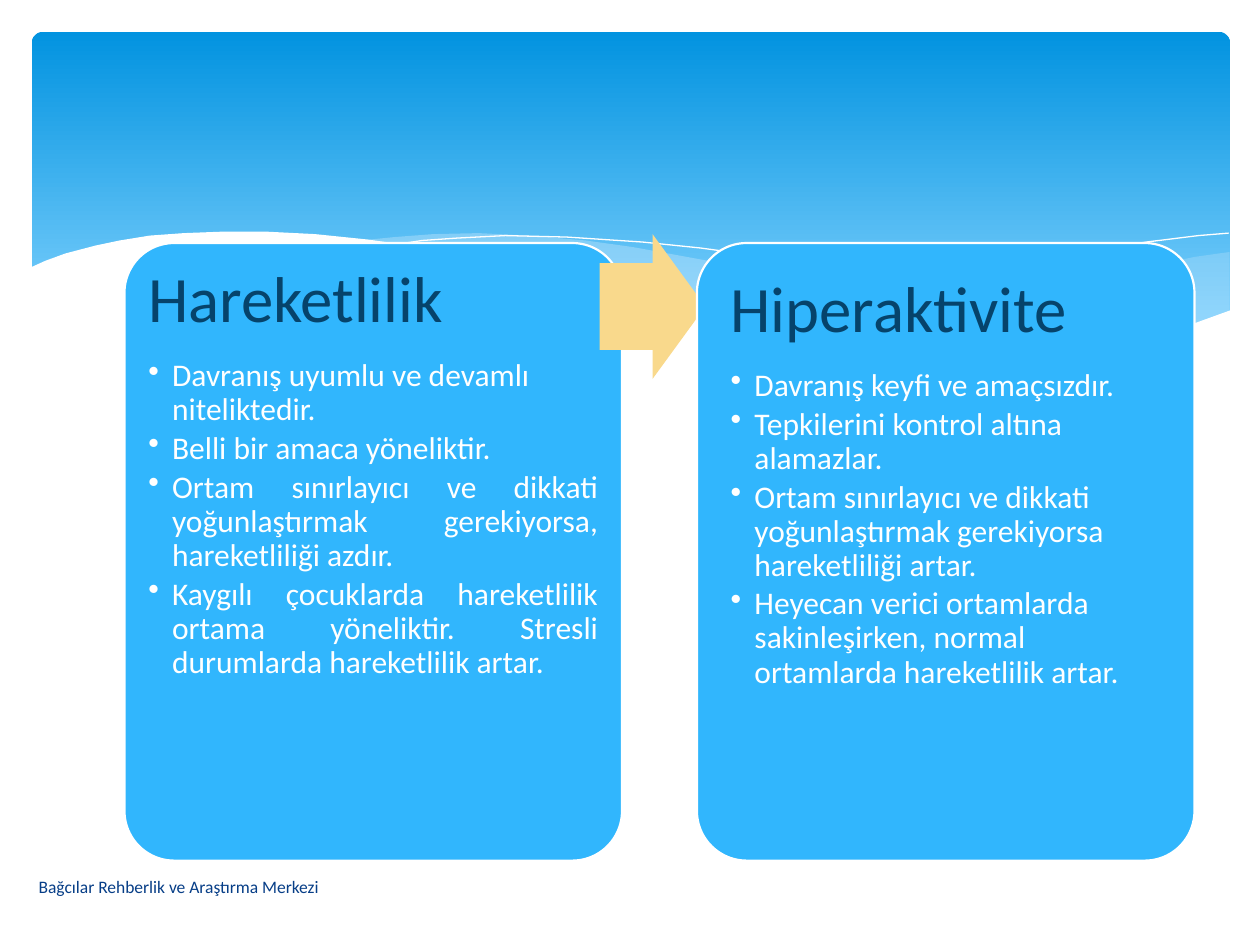
import pptx
import pptx.util
import pptx.dml.color
import pptx.enum.shapes
import pptx.enum.text
import pptx.oxml.ns
from lxml import etree

Cm, Pt = pptx.util.Cm, pptx.util.Pt
RGB = pptx.dml.color.RGBColor
KIND = pptx.enum.shapes.MSO_SHAPE
ALIGN = pptx.enum.text.PP_ALIGN
qn = pptx.oxml.ns.qn

WHITE = RGB(0xFF, 0xFF, 0xFF)
DEEP = RGB(0x02, 0x93, 0xE0)
LIGHT = RGB(0x83, 0xD3, 0xFE)
PALE = RGB(0xC6, 0xE7, 0xFC)
SKY = RGB(0x31, 0xB6, 0xFD)
SAND = RGB(0xF9, 0xD9, 0x8C)
NAVY = RGB(0x06, 0x43, 0x6B)
BLUE = RGB(0x07, 0x3E, 0x87)

FONT = "Calibri"
TOP, WIDE, HIGH = 4.9, 10.03, 12.45
PAD = 0.3

# Outlines as (x, y) in centimetres
RIGHT_WAVE = [
    (24.79, 5.08), (24.08, 5.18), (23.01, 5.41), (21.87, 5.66), (20.45, 6.02),
    (19.13, 6.3), (17.93, 6.53), (16.79, 6.73), (17.91, 6.88), (18.92, 6.99),
    (19.84, 7.04), (20.68, 7.06), (21.69, 7.01), (22.58, 6.91), (23.39, 6.73),
    (24.1, 6.53), (24.79, 6.27)]
MID_WAVE = [
    (22.68, 6.93), (21.26, 6.73), (19.69, 6.45), (17.93, 6.1), (15.98, 5.64),
    (14.83, 5.36), (13.74, 5.16), (12.75, 4.98), (11.81, 4.85), (10.67, 4.75),
    (9.65, 4.7), (8.74, 4.72), (7.95, 4.78), (7.26, 4.85), (8.2, 4.98),
    (9.19, 5.16), (10.26, 5.36), (11.4, 5.64), (13.46, 6.1), (15.27, 6.48),
    (16.89, 6.76), (18.34, 6.96), (19.63, 7.04), (20.78, 7.06), (21.77, 7.04)]
LONG_LINE = [
    (7.85, 4.95), (8.51, 4.85), (9.22, 4.8), (10.19, 4.75), (11.43, 4.78),
    (12.95, 4.88), (14.12, 5), (15.44, 5.18), (16.89, 5.41), (18.47, 5.74),
    (20.19, 6.12), (22.07, 6.63), (23.04, 6.91)]
SHORT_LINE = [
    (15.57, 6.53), (17.07, 6.12), (19, 5.66), (20.47, 5.33), (22, 5.05),
    (23.11, 4.88), (24.16, 4.75), (24.77, 4.7)]
WHITE_WAVE = [
    (24.82, 6.25), (24.13, 6.5), (23.37, 6.73), (22.53, 6.88), (21.59, 6.99),
    (20.55, 7.04), (19.33, 6.99), (17.98, 6.86), (16.46, 6.65), (14.71, 6.35),
    (12.78, 5.92), (11.35, 5.59), (9.93, 5.26), (8.64, 5), (7.42, 4.83),
    (6.35, 4.72), (5.36, 4.67), (4.5, 4.67), (3.71, 4.7), (3.02, 4.75),
    (2.41, 4.85), (1.93, 4.95), (1.32, 5.11), (0.91, 5.26), (0.58, 5.41),
    (0.58, 8.36), (24.82, 8.36)]

CALM = [
    ("Davranış uyumlu ve devamlı niteliktedir.", ALIGN.LEFT),
    ("Belli bir amaca yöneliktir.", ALIGN.LEFT),
    ("Ortam sınırlayıcı ve dikkati yoğunlaştırmak gerekiyorsa, "
     "hareketliliği azdır.", ALIGN.JUSTIFY),
    ("Kaygılı çocuklarda hareketlilik ortama yöneliktir. "
     "Stresli durumlarda hareketlilik artar.", ALIGN.JUSTIFY)]
HYPER = [
    ("Davranış keyfi ve amaçsızdır.", ALIGN.LEFT),
    ("Tepkilerini kontrol altına alamazlar.", ALIGN.LEFT),
    ("Ortam sınırlayıcı ve dikkati yoğunlaştırmak gerekiyorsa "
     "hareketliliği artar.", ALIGN.LEFT),
    ("Heyecan verici ortamlarda sakinleşirken, normal ortamlarda "
     "hareketlilik artar.", ALIGN.LEFT)]


def add_shape(slide, kind, box, fill=None, line=None, adjust=()):
    shape = slide.shapes.add_shape(kind, *map(Cm, box))
    shape.shadow.inherit = False
    for i, value in enumerate(adjust):
        shape.adjustments[i] = value
    if fill is not None:
        shape.fill.solid()
        shape.fill.fore_color.rgb = fill
    if line is None:
        shape.line.fill.background()
    else:
        shape.line.color.rgb = line
        shape.line.width = Pt(1.25)
    return shape


def add_banner(slide):
    banner = add_shape(slide, KIND.ROUNDED_RECTANGLE,
                       (0.64, 0.64, 24.16, 6.86), adjust=[0.034])
    banner.fill.gradient()
    banner.fill.gradient_angle = 270
    stops = banner.fill.gradient_stops
    for stop, place, tint in zip(stops, (0, 0.9), (DEEP, LIGHT)):
        stop.position = place
        stop.color.rgb = tint


def add_path(slide, points, close):
    spots = [(Cm(x), Cm(y)) for x, y in points]
    pen = slide.shapes.build_freeform(*spots[0])
    pen.add_line_segments(spots[1:], close=close)
    shape = pen.convert_to_shape()
    shape.shadow.inherit = False
    return shape


def add_wave(slide, points, fill, alpha=100):
    """Closed area with its opacity in percent."""
    wave = add_path(slide, points, True)
    wave.fill.solid()
    wave.fill.fore_color.rgb = fill
    wave.line.fill.background()
    if alpha < 100:
        tint = wave.fill._xPr.find(qn("a:solidFill"))[0]
        etree.SubElement(tint, qn("a:alpha"), val=str(alpha * 1000))


def add_curve(slide, points):
    curve = add_path(slide, points, False)
    curve.fill.background()
    curve.line.color.rgb = WHITE
    curve.line.width = Pt(0)


def add_text(slide, box, inset=None):
    frame = slide.shapes.add_textbox(*map(Cm, box)).text_frame
    frame.word_wrap = True
    if inset is not None:
        frame.margin_left = frame.margin_right = Cm(inset)
        frame.margin_top = frame.margin_bottom = Cm(inset)
    return frame


def style(para, size, color):
    for run in para.runs:
        run.font.name = FONT
        run.font.size = Pt(size)
        run.font.color.rgb = color


def add_bullet(para):
    props = para._p.get_or_add_pPr()
    props.set("marL", str(Cm(0.48)))
    props.set("indent", str(-Cm(0.48)))
    etree.SubElement(props, qn("a:buChar"), char="•")


def add_card(slide, left, title, items, inset):
    add_shape(slide, KIND.ROUNDED_RECTANGLE, (left, TOP, WIDE, HIGH),
              SKY, WHITE, [0.1])
    frame = add_text(slide, (left + PAD, TOP + PAD, WIDE - 2 * PAD,
                             HIGH - 2 * PAD), inset)
    head = frame.paragraphs[0]
    head.text = title
    head.line_spacing = 0.9
    head.space_after = Pt(13)
    style(head, 37, NAVY)
    for text, align in items:
        para = frame.add_paragraph()
        para.text = text
        para.level = 1
        para.alignment = align
        para.line_spacing = 0.9
        para.space_after = Pt(2.7)
        add_bullet(para)
        style(para, 18, WHITE)


def add_footer(slide, text):
    frame = add_text(slide, (0.53, 17.37, 10.52, 1.02))
    frame.vertical_anchor = pptx.enum.text.MSO_ANCHOR.MIDDLE
    frame.text = text
    style(frame.paragraphs[0], 10, BLUE)


def main():
    deck = pptx.Presentation()
    deck.slide_width, deck.slide_height = Cm(25.4), Cm(19.05)
    slide = deck.slides.add_slide(deck.slide_layouts[6])
    add_banner(slide)
    add_wave(slide, RIGHT_WAVE, PALE, 29)
    add_wave(slide, MID_WAVE, PALE, 40)
    add_curve(slide, LONG_LINE)
    add_curve(slide, SHORT_LINE)
    add_wave(slide, WHITE_WAVE, WHITE)
    add_card(slide, 2.51, "Hareketlilik", CALM, 0.18)
    add_shape(slide, KIND.RIGHT_ARROW, (12.09, 4.72, 2.13, 2.92), SAND,
              adjust=[0.6, 0.5])
    add_card(slide, 14.05, "Hiperaktivite", HYPER, 0.38)
    add_footer(slide, "Bağcılar Rehberlik ve Araştırma Merkezi")
    deck.save("out.pptx")


if __name__ == "__main__":
    main()
